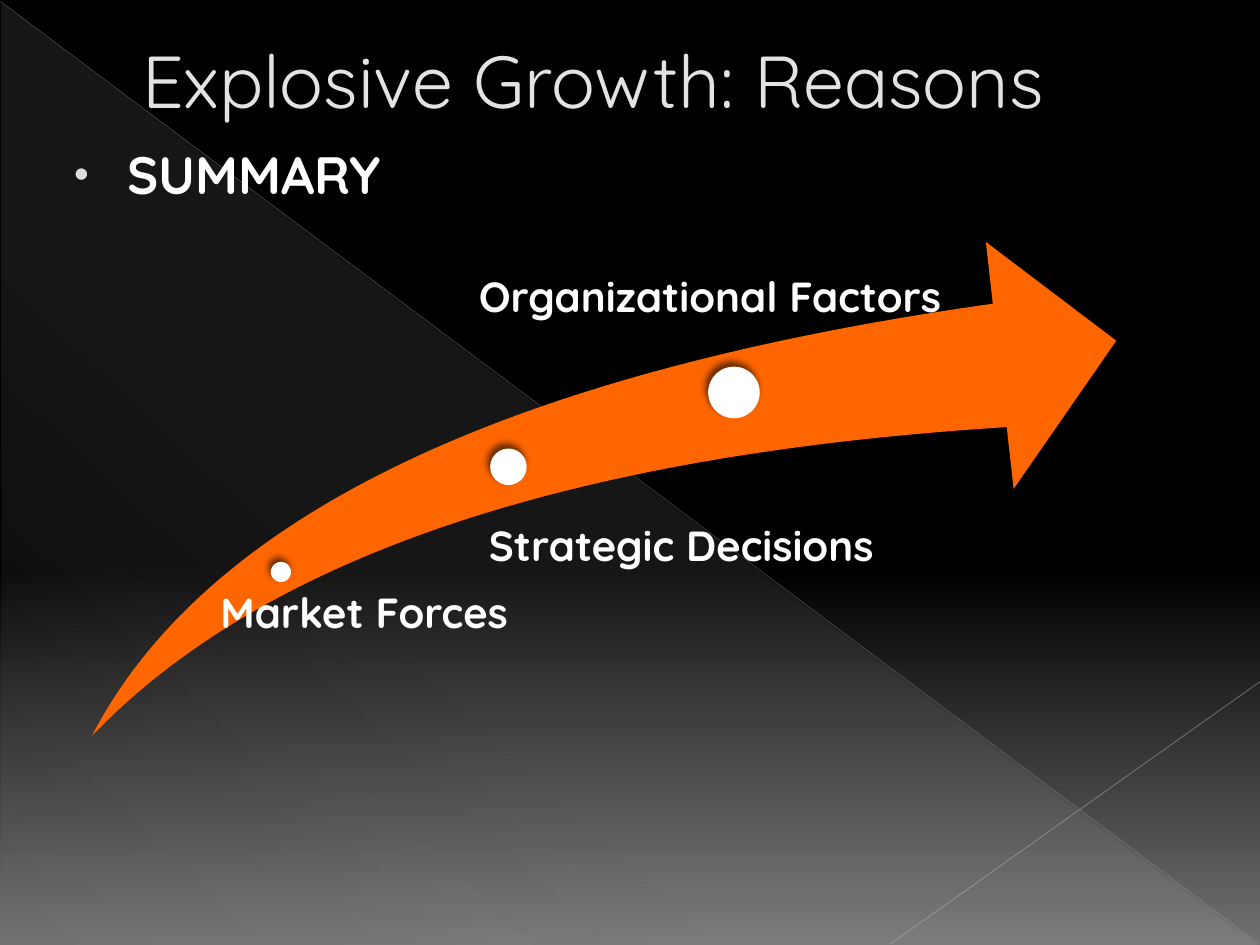
from dataclasses import dataclass, field

from lxml import etree
from pptx import Presentation
from pptx import util as u
from pptx.dml.color import RGBColor
from pptx.enum import shapes, text
from pptx.oxml import ns

CELL = u.Inches(0.1)  # grid of 100 columns by 75 rows
COLS, ROWS = 100, 75
FONT = "Quicksand"
HUES = {
    "black": "000000", "grey": "707070", "veil": "F8F8F8",
    "edge": "B4B4B4", "ray": "BDBDBD", "title": "E3E3E3",
    "mark": "DDDDDD", "white": "FFFFFF", "swoosh": "FF6600",
}


@dataclass
class Box:
    col: float
    row: float
    wide: float
    high: float

    def cells(self) -> list[int]:
        return [int(n * CELL) for n in (self.col, self.row, self.wide, self.high)]


@dataclass
class Label:
    words: str
    box: Box
    size: float
    hue: str = "white"
    bold: bool = True
    frame: dict = field(default_factory=dict)
    para: dict = field(default_factory=dict)


@dataclass
class Ray:
    start: tuple
    end: tuple
    hue: str
    width: float
    alpha: int


@dataclass
class Step:
    dot: Box
    label: Label


def step(words: str, dot: tuple, box: Box, left: float, top: float = 0) -> Step:
    """Pair a round dot (col, row, size) with its label."""
    col, row, size = dot
    frame = {"margin_left": int(left * CELL), "margin_top": int(top * CELL),
             "margin_right": 0, "margin_bottom": 0}
    para = {"line_spacing": 0.9, "space_after": u.Pt(8.4)}
    return Step(Box(col, row, size, size),
                Label(words, box, 24, frame=frame, para=para))


TITLE = Label("Explosive Growth: Reasons", Box(5, 0, 90, 12.5), 42, "title", False,
              {"vertical_anchor": text.MSO_ANCHOR.MIDDLE})
SUMMARY = Label("SUMMARY", Box(4.2, 10.8, 90, 64.2), 30)
ARROW = Box(7.3, 19.2, 81.3, 39.2)
RAYS = [
    Ray((0, 0.1), (99.9, 74.9), "edge", 0.39, 35),
    Ray((100, 54.1), (70.7, 74.9), "ray", 0.47, 45),
]
STEPS = [
    step("Market Forces", (21.5, 44.6, 1.6), Box(16.6, 47, 41.3, 11.3), 0.9),
    step("Strategic Decisions", (38.9, 35.6, 2.9), Box(37.2, 41.7, 49.9, 13.9), 1.6),
    step("Organizational Factors", (56.2, 29.1, 4.1), Box(35.8, 19.2, 55.5, 27.2),
         2.2, 2.7),
]


def rgb(hue: str) -> RGBColor:
    return RGBColor.from_string(HUES[hue])


def apply(item, values: dict) -> None:
    for name, value in values.items():
        setattr(item, name, value)


def node(home, tag: str, **attrs):
    made = etree.SubElement(home, ns.qn(tag))
    for name, value in attrs.items():
        made.set(name, str(value))
    return made


def tint(home, hue: str, alpha: int) -> None:
    color = node(home, "a:srgbClr", val=HUES[hue])
    if alpha < 100:
        node(color, "a:alpha", val=alpha * 1000)


def blend(fill, home, stops: list[tuple], angle: int) -> None:
    """Give a fill a linear gradient of (share, hue, alpha) stops."""
    fill.gradient()
    grad = next(home.iter(ns.qn("a:gradFill")))
    for child in list(grad):
        grad.remove(child)
    row = node(grad, "a:gsLst")
    for share, hue, alpha in stops:
        tint(node(row, "a:gs", pos=share * 1000), hue, alpha)
    node(grad, "a:lin", ang=angle * 60000, scaled=0)


def draw_shape(home, kind, box: Box, hue: str = ""):
    shape = home.add_shape(kind, *box.cells())
    shape.shadow.inherit = False
    shape.line.fill.background()
    if hue:
        shape.fill.solid()
        shape.fill.fore_color.rgb = rgb(hue)
    return shape


def draw_ray(home, ray: Ray) -> None:
    ends = [int(n * CELL) for n in (*ray.start, *ray.end)]
    line = home.add_connector(shapes.MSO_CONNECTOR.STRAIGHT, *ends)
    line.line.width = u.Pt(ray.width)
    line.line.color.rgb = rgb(ray.hue)
    color = next(line.line._ln.iter(ns.qn("a:srgbClr")))
    node(color, "a:alpha", val=ray.alpha * 1000)
    node(line._element.spPr, "a:effectLst")


def draw_label(home, label: Label):
    frame = home.add_textbox(*label.box.cells()).text_frame
    apply(frame, {"word_wrap": True, **label.frame})
    para = frame.paragraphs[0]
    apply(para, label.para)
    run = para.add_run()
    run.text = label.words
    apply(run.font, {"name": FONT, "size": u.Pt(label.size), "bold": label.bold})
    run.font.color.rgb = rgb(label.hue)
    return para


def indent(para, left: float, first: float = 0):
    props = para._p.get_or_add_pPr()
    props.set("marL", str(int(left * CELL)))
    props.set("indent", str(int(first * CELL)))
    return props


def draw_dot(home, box: Box) -> None:
    dot = draw_shape(home, shapes.MSO_SHAPE.OVAL, box, "white")
    glow = dot._element.spPr.find(ns.qn("a:effectLst"))
    cast = node(glow, "a:outerShdw", blurRad=u.Pt(4), dist=u.Pt(3),
                dir=245 * 60000, algn="tl", rotWithShape=0)
    tint(cast, "black", 60)


def main() -> None:
    deck = Presentation()
    apply(deck, {"slide_width": COLS * CELL, "slide_height": ROWS * CELL})
    slide = deck.slides.add_slide(deck.slide_layouts[6])
    tree = slide.shapes
    blend(slide.background.fill, slide._element,
          [(0, "black", 100), (60, "black", 100), (100, "grey", 100)], 90)

    veil = draw_shape(tree, shapes.MSO_SHAPE.RIGHT_TRIANGLE, Box(0.1, 0.2, 99.8, 74.8))
    blend(veil.fill, veil._element,
          [(0, "veil", 10), (70, "veil", 8), (100, "veil", 1)], 133)
    for ray in RAYS:
        draw_ray(tree, ray)

    indent(draw_label(tree, TITLE), 5.3)
    props = indent(draw_label(tree, SUMMARY), 4.9, -4.2)
    tint(node(props, "a:buClr"), "mark", 100)
    node(props, "a:buSzPct", val=80000)
    node(props, "a:buFont", typeface="Arial")
    node(props, "a:buChar", char="•")

    group = tree.add_group_shape().shapes
    swoosh = draw_shape(group, shapes.MSO_SHAPE.SWOOSH_ARROW, ARROW, "swoosh")
    for spot in range(2):
        swoosh.adjustments[spot] = 0.25
    for item in STEPS:
        draw_dot(group, item.dot)
        draw_label(group, item.label)

    deck.save("out.pptx")


if __name__ == "__main__":
    main()
